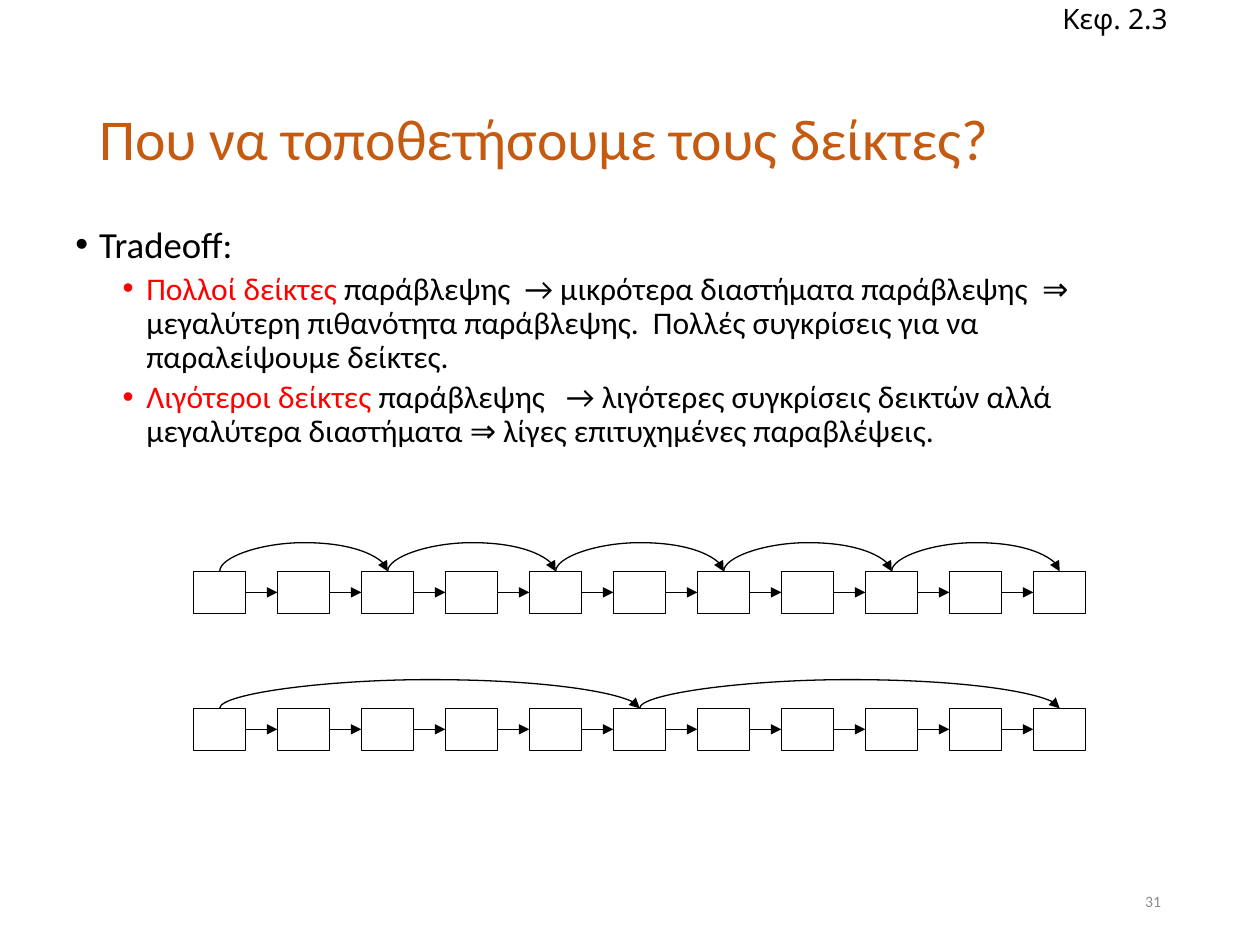
from lxml import etree
from pptx import Presentation
from pptx.dml.color import RGBColor
from pptx.enum.shapes import MSO_CONNECTOR, MSO_SHAPE
from pptx.enum.text import MSO_ANCHOR, MSO_AUTO_SIZE, PP_ALIGN
from pptx.oxml.ns import qn
from pptx.util import Pt

STRAIGHT, CURVE = MSO_CONNECTOR.STRAIGHT, MSO_CONNECTOR.CURVE
RECTANGLE = MSO_SHAPE.RECTANGLE
TOP, MIDDLE = MSO_ANCHOR.TOP, MSO_ANCHOR.MIDDLE
LEFT, RIGHT = PP_ALIGN.LEFT, PP_ALIGN.RIGHT
NO_AUTOFIT = MSO_AUTO_SIZE.NONE

BLACK, RED, ORANGE, GREY = "000000", "FF0000", "C55A11", "8C8C8C"
NODE_COUNT, NODE_LEFT, NODE_PITCH = 11, 110.5, 48
NODE_WIDTH, NODE_HEIGHT = 30, 24
ARCH_DEPTH, ARCH_RISE = 0.125, 18
LISTS = [(326.5, 2), (404.75, 5)]

BULLETS = [
    (0, 21, 7.5, [("Tradeoff:", BLACK)]),
    (1, 18, 3.75, [
        ("Πολλοί δείκτες ", RED),
        ("παράβλεψης  → μικρότερα διαστήματα παράβλεψης  ⇒ μεγαλύτερη πιθανότητα "
         "παράβλεψης.  Πολλές συγκρίσεις για να παραλείψουμε δείκτες.", BLACK)]),
    (1, 18, 3.75, [
        ("Λιγότεροι δείκτες ", RED),
        ("παράβλεψης   → λιγότερες συγκρίσεις δεικτών αλλά μεγαλύτερα διαστήματα "
         "⇒ λίγες επιτυχημένες παραβλέψεις.", BLACK)]),
]


def color(value):
    """Return the colour for a hex string."""
    return RGBColor.from_string(value)


def apply(target, values):
    """Set every attribute named in a dict of format values."""
    for name, value in values.items():
        setattr(target, name, value)


def place(shape, left, top, width, height):
    """Move and size a shape."""
    apply(shape, {"left": Pt(left), "top": Pt(top),
                  "width": Pt(width), "height": Pt(height)})


def add_run(paragraph, text, size, text_color, font="Calibri"):
    """Append a formatted run to a paragraph."""
    run = paragraph.add_run()
    run.text = text
    apply(run.font, {"name": font, "size": Pt(size)})
    run.font.color.rgb = color(text_color)


def add_text_box(slide, left, top, width, height, anchor=MIDDLE, wrap=True):
    """Add an empty text box and return its text frame."""
    box = slide.shapes.add_textbox(Pt(left), Pt(top), Pt(width), Pt(height))
    apply(box.text_frame, {"word_wrap": wrap, "vertical_anchor": anchor})
    return box.text_frame


def set_title(slide, text):
    """Fill and format the title placeholder."""
    title = slide.shapes.title
    place(title, 49.5, 29, 621, 104.5)
    apply(title.text_frame, {"vertical_anchor": MIDDLE, "auto_size": NO_AUTOFIT})
    paragraph = title.text_frame.paragraphs[0]
    apply(paragraph, {"alignment": LEFT, "line_spacing": 0.9})
    add_run(paragraph, text, 33, ORANGE)


def add_bullets(slide):
    """Add the two-level bulleted text."""
    frame = add_text_box(slide, 36, 126, 630, 189, anchor=TOP)
    for index, (level, size, space, runs) in enumerate(BULLETS):
        paragraph = frame.add_paragraph() if index else frame.paragraphs[0]
        apply(paragraph, {"level": level, "line_spacing": 0.9, "space_before": Pt(space)})
        properties = paragraph._p.get_or_add_pPr()
        properties.set("marL", str(Pt(13.5 + 27 * level)))
        properties.set("indent", str(Pt(-13.5)))
        etree.SubElement(properties, qn("a:buFont")).set("typeface", "Arial")
        etree.SubElement(properties, qn("a:buChar")).set("char", "•")
        for text, text_color in runs:
            add_run(paragraph, text, size, text_color)


def add_arrow(slide, kind, begin_x, begin_y, end_x, end_y):
    """Add a thin black connector with a triangular head."""
    arrow = slide.shapes.add_connector(kind, Pt(begin_x), Pt(begin_y), Pt(end_x), Pt(end_y))
    arrow.line.width = Pt(0.75)
    arrow.line.color.rgb = color(BLACK)
    etree.SubElement(arrow.line._get_or_add_ln(), qn("a:tailEnd")).set("type", "triangle")
    etree.SubElement(arrow._element.spPr, qn("a:effectLst"))
    return arrow


def add_skip(slide, begin_x, end_x, top):
    """Add a curved skip pointer, arching above two nodes."""
    middle, half = (begin_x + end_x) / 2, (end_x - begin_x) / 2
    arch = add_arrow(slide, CURVE, middle, top + half, middle + ARCH_DEPTH, top - half)
    properties = arch._element.spPr
    properties.find(qn("a:xfrm")).set("rot", "5400000")
    guide = etree.SubElement(properties.find(qn("a:prstGeom")).find(qn("a:avLst")), qn("a:gd"))
    guide.set("name", "adj1")
    guide.set("fmla", f"val {round(-ARCH_RISE / ARCH_DEPTH * 100000)}")


def add_node(slide, left, top):
    """Add one empty list node."""
    node = slide.shapes.add_shape(RECTANGLE, Pt(left), Pt(top), Pt(NODE_WIDTH), Pt(NODE_HEIGHT))
    node.shadow.inherit = False
    node.fill.background()
    node.line.width = Pt(0.75)
    node.line.color.rgb = color(BLACK)


def add_skip_list(slide, top, step):
    """Add a row of linked nodes with a skip pointer every few nodes."""
    lefts = [NODE_LEFT + NODE_PITCH * index for index in range(NODE_COUNT)]
    middle = top + NODE_HEIGHT / 2
    for left in lefts:
        add_node(slide, left, top)
    for left, following in zip(lefts, lefts[1:]):
        add_arrow(slide, STRAIGHT, left + NODE_WIDTH, middle, following, middle)
    stops = [left + NODE_WIDTH / 2 for left in lefts[::step]]
    for begin_x, end_x in zip(stops, stops[1:]):
        add_skip(slide, begin_x, end_x, top)


def main():
    """Build the slide and save it."""
    presentation = Presentation()
    apply(presentation, {"slide_width": Pt(720), "slide_height": Pt(540)})
    slide = presentation.slides.add_slide(presentation.slide_layouts[5])
    set_title(slide, "Που να τοποθετήσουμε τους δείκτες?")
    add_bullets(slide)
    for top, step in LISTS:
        add_skip_list(slide, top, step)
    number = add_text_box(slide, 508.5, 500.5, 162, 28.75).paragraphs[0]
    number.alignment = RIGHT
    add_run(number, "31", 9, GREY)
    chapter = add_text_box(slide, 600, -3, 79, 26.5, wrap=False).paragraphs[0]
    add_run(chapter, "Κεφ. 2.3", 16, BLACK, "Noto Sans")
    presentation.save("out.pptx")


if __name__ == "__main__":
    main()
